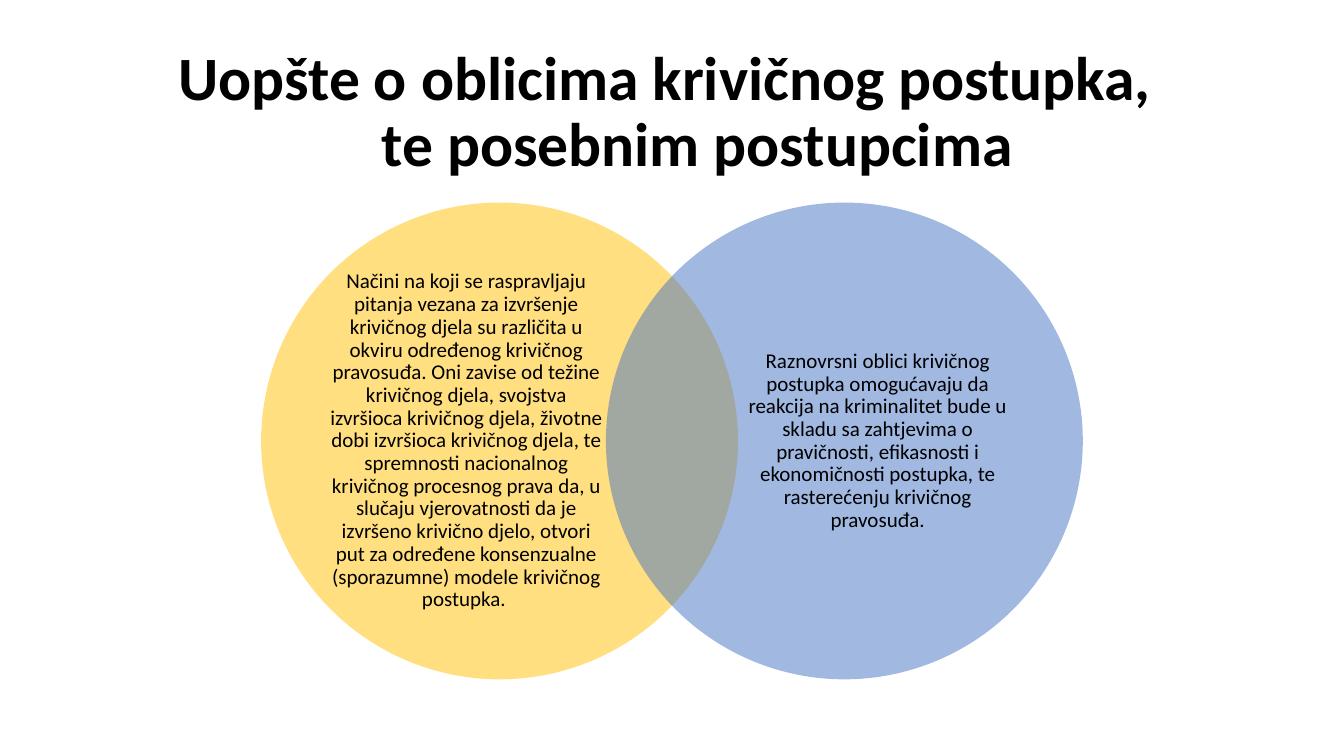
"""Build a slide with a title over two overlapping circles of text."""
from lxml import etree
from pptx import Presentation
from pptx.dml.color import RGBColor
from pptx.enum.shapes import MSO_SHAPE
from pptx.enum.text import MSO_ANCHOR, MSO_AUTO_SIZE, PP_ALIGN
from pptx.oxml.ns import qn
from pptx.util import Inches, Pt

OVAL = MSO_SHAPE.OVAL
MIDDLE = MSO_ANCHOR.MIDDLE
CENTER = PP_ALIGN.CENTER
FIXED = MSO_AUTO_SIZE.NONE
BLACK = RGBColor(0, 0, 0)
GOLD = RGBColor(0xFF, 0xC0, 0x00)
BLUE = RGBColor(0x44, 0x72, 0xC4)
FONT = "Calibri"

TITLE = ["Uopšte o oblicima krivičnog postupka, ", "\tte posebnim postupcima"]
CIRCLES = [
    (GOLD, "Načini na koji se raspravljaju pitanja vezana za izvršenje "
           "krivičnog djela su različita u okviru određenog krivičnog "
           "pravosuđa. Oni zavise od težine krivičnog djela, svojstva "
           "izvršioca krivičnog djela, životne dobi izvršioca krivičnog "
           "djela, te spremnosti nacionalnog krivičnog procesnog prava da, "
           "u slučaju vjerovatnosti da je izvršeno krivično djelo, otvori "
           "put za određene konsenzualne (sporazumne) modele krivičnog "
           "postupka. "),
    (BLUE, "Raznovrsni oblici krivičnog postupka omogućavaju da reakcija na "
           "kriminalitet bude u skladu sa zahtjevima o pravičnosti, "
           "efikasnosti i ekonomičnosti postupka, te rasterećenju krivičnog "
           "pravosuđa."),
]

WIDE, HIGH = 13.33, 7.5
SIZE, STEP, TOP = 4.73, 3.42, 2.01
LEFT = (WIDE - SIZE - STEP) / 2
TEXT_W, TEXT_H, INSET = 2.73, 3.62, 0.67


def box(*sides):
    """Turn inches into slide lengths."""
    return [Inches(side) for side in sides]


def write(frame, lines, size, bold=False):
    """Write centred lines into one paragraph."""
    frame.word_wrap = True
    frame.auto_size = FIXED
    frame.vertical_anchor = MIDDLE
    para = frame.paragraphs[0]
    para.alignment = CENTER
    para.line_spacing = 0.9
    for row, line in enumerate(lines):
        if row:
            para.add_line_break()
        run = para.add_run()
        run.text = line
        run.font.name = FONT
        run.font.size = Pt(size)
        run.font.bold = bold
        run.font.color.rgb = BLACK


def draw_circle(slide, left, color):
    """Draw one half-clear circle."""
    disc = slide.shapes.add_shape(OVAL, *box(left, TOP, SIZE, SIZE))
    disc.shadow.inherit = False
    disc.line.fill.background()
    disc.fill.solid()
    disc.fill.fore_color.rgb = color
    tone = disc.fill._xPr.find(qn("a:solidFill"))[0]
    etree.SubElement(tone, qn("a:alpha"), val="50000")


def draw_text(slide, left, text):
    """Place the text of one circle."""
    top = TOP + (SIZE - TEXT_H) / 2
    frame = slide.shapes.add_textbox(*box(left, top, TEXT_W, TEXT_H)).text_frame
    frame.margin_left = frame.margin_right = 0
    frame.margin_top = frame.margin_bottom = 0
    write(frame, [text], 15)


def main():
    """Build and save the slide."""
    deck = Presentation()
    deck.slide_width, deck.slide_height = box(WIDE, HIGH)
    slide = deck.slides.add_slide(deck.slide_layouts[5])
    title = slide.shapes.title
    title.left, title.top, title.width, title.height = box(0.92, 0.4, 11.5, 1.45)
    write(title.text_frame, TITLE, 44, True)
    shifts = [INSET, SIZE - INSET - TEXT_W]
    for col, (color, text) in enumerate(CIRCLES):
        left = LEFT + col * STEP
        draw_circle(slide, left, color)
        draw_text(slide, left + shifts[col], text)
    deck.save("out.pptx")


if __name__ == "__main__":
    main()
